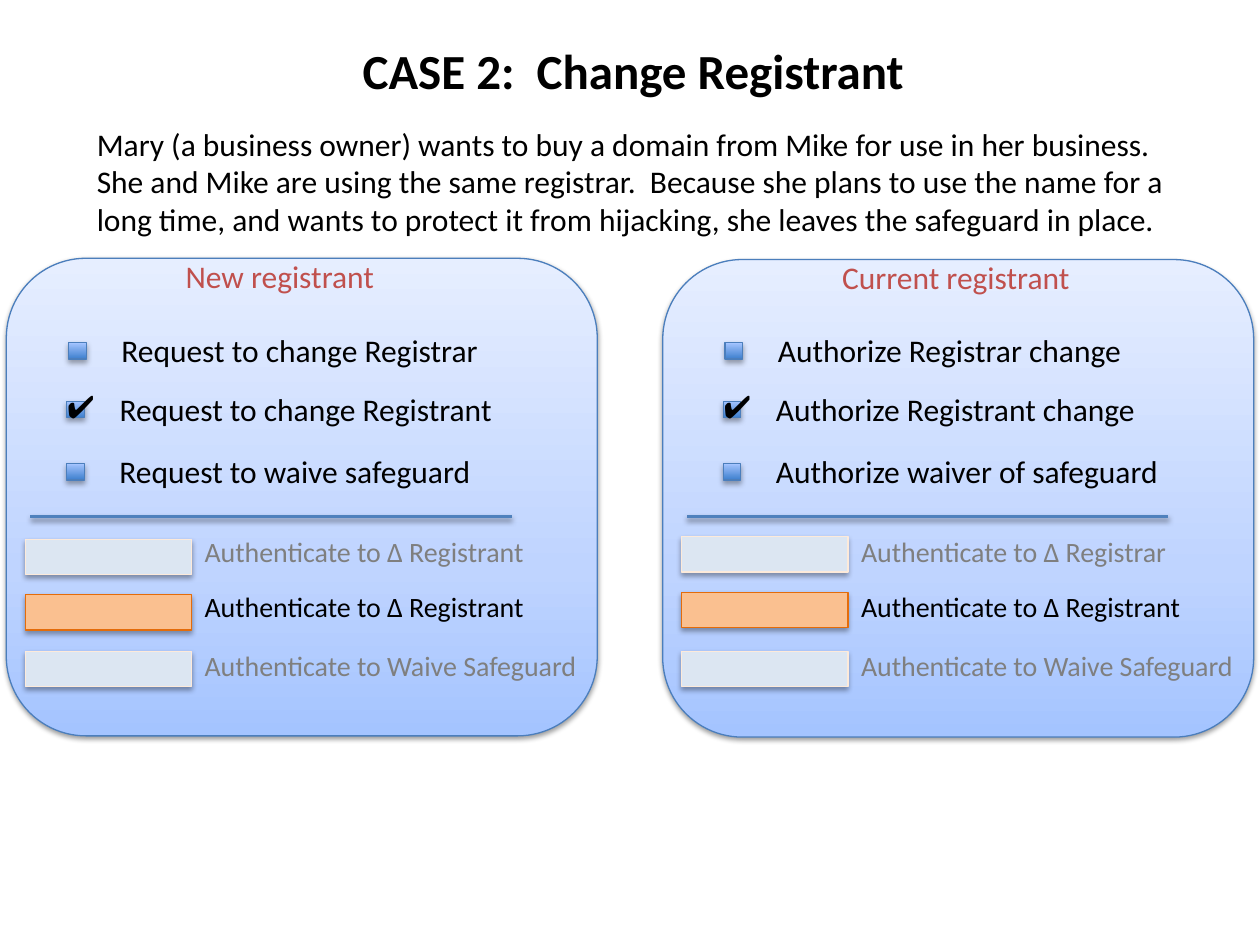
from pptx import Presentation
from pptx import util as u
from pptx.dml.color import RGBColor
from pptx.enum import shapes, text
from pptx.oxml import parse_xml
from pptx.oxml.ns import nsdecls

THEME = {
    "panel": [(0, "A4C4FF"), (35, "BFD4FF"), (100, "E6EEFF")],
    "box": [(0, "3F80CE"), (100, "A4C4FF")],
    "edge": "4B7EBC",
    "rule": "4F81BD",
    "idle": ("DCE6F2", "FDEADA"),
    "active": ("FAC090", "E46C0A"),
    "heading": {"size": 18, "color": "C0504D"},
    "body": {"size": 18},
    "tick": {"size": 18, "name": "Arial"},
    "title": {"size": 28, "bold": True},
    "idle_text": {"size": 16, "color": "7F7F7F"},
    "active_text": {"size": 16},
}

prs = Presentation()
prs.slide_width, prs.slide_height = u.Inches(10), u.Inches(7.5)
col, row = prs.slide_width / 100, prs.slide_height / 75
slide = prs.slides.add_slide(prs.slide_layouts[6])


def style(sp, fill, edge, width=0.75, shade=35, drop=1.8):
    if isinstance(fill, list):
        stops = "".join(
            f'<a:gs pos="{pos * 1000}"><a:srgbClr val="{color}"/></a:gs>'
            for pos, color in fill)
        sp._element.spPr.append(parse_xml(
            f'<a:gradFill {nsdecls("a")} rotWithShape="1"><a:gsLst>{stops}</a:gsLst>'
            '<a:lin ang="16200000" scaled="0"/></a:gradFill>'))
    elif fill:
        sp.fill.solid()
        sp.fill.fore_color.rgb = RGBColor.from_string(fill)
    sp.line.color.rgb = RGBColor.from_string(edge)
    sp.line.width = u.Pt(width)
    sp._element.spPr.append(parse_xml(
        f'<a:effectLst {nsdecls("a")}><a:outerShdw blurRad="{u.Pt(3.1)}" '
        f'dist="{u.Pt(drop)}" dir="5400000" rotWithShape="0"><a:srgbClr val="000000">'
        f'<a:alpha val="{shade * 1000}"/></a:srgbClr></a:outerShdw></a:effectLst>'))


def label(parent, words, x, y, w, h, look, wrap=False, align=text.PP_ALIGN.LEFT):
    tb = parent.add_textbox(int(x * col), int(y * row), int(w * col), int(h * row))
    tf = tb.text_frame
    tf.word_wrap = wrap
    tf.auto_size = text.MSO_AUTO_SIZE.SHAPE_TO_FIT_TEXT
    p = tf.paragraphs[0]
    p.alignment = align
    r = p.add_run()
    r.text = words
    look = {"name": "Calibri", "color": "000000", **look}
    r.font.color.rgb = RGBColor.from_string(look.pop("color"))
    look["size"] = u.Pt(look["size"])
    for key, value in look.items():
        setattr(r.font, key, value)


label(slide.shapes, "CASE 2:  Change Registrant", 27.4, 2.7, 45.7, 5.7,
      THEME["title"], align=text.PP_ALIGN.CENTER)

panels = [
    {"x": 0.5, "y": 20.5, "heading": ("New registrant", 17.3), "bar_y": 42.8,
     "requests": [("Request to change Registrar", 30.8),
                  ("Request to change Registrant", 32.2),
                  ("Request to waive safeguard", 30.4)],
     "first_bar": ("Authenticate to Δ Registrant", 27.9)},
    {"x": 52.6, "y": 20.6, "heading": ("Current registrant", 20.4), "bar_y": 42.6,
     "requests": [("Authorize Registrar change", 29.7),
                  ("Authorize Registrant change", 31),
                  ("Authorize waiver of safeguard", 32.9)],
     "first_bar": ("Authenticate to Δ Registrar", 26.8)},
]
RECT = shapes.MSO_SHAPE.RECTANGLE

for panel in panels:
    x, y = panel["x"], panel["y"]
    g = slide.shapes.add_group_shape().shapes
    sp = g.add_shape(shapes.MSO_SHAPE.ROUNDED_RECTANGLE, int(x * col), int(y * row),
                     int(46.9 * col), int(37.9 * row))
    style(sp, THEME["panel"], THEME["edge"], shade=38, drop=1.6)

    words, width = panel["heading"]
    label(g, words, x + 13.25, y - 0.6, width, 4, THEME["heading"])

    rows = zip(panel["requests"], (4.95, 4.8, 4.8), (27.2, 31.85, 36.8), (25.8, 30.5, 35.4))
    for (words, width), box_x, box_y, text_y in rows:
        sp = g.add_shape(RECT, int((x + box_x) * col), int(box_y * row),
                         int(1.4 * col), int(1.3 * row))
        style(sp, THEME["box"], THEME["edge"])
        label(g, words, x + box_x + 3.2, text_y, width, 4, THEME["body"])
    label(g, "✔", x + 3.85, 30.2, 4.3, 4, THEME["tick"])

    rule = g.add_connector(shapes.MSO_CONNECTOR.STRAIGHT, int((x + 40.1) * col),
                           int(41 * row), int((x + 1.9) * col), int(41 * row))
    style(rule, None, THEME["rule"], width=2, shade=38, drop=1.6)

    bars = [
        (panel["first_bar"], "idle", panel["bar_y"], 41.9),
        (("Authenticate to Δ Registrant", 27.9), "active", panel["bar_y"] + 4.4, 46.3),
        (("Authenticate to Waive Safeguard", 32.2), "idle", 51.7, 51),
    ]
    for (words, width), state, bar_y, text_y in bars:
        sp = g.add_shape(RECT, int((x + 1.5) * col), int(bar_y * row),
                         int(13.2 * col), int(2.8 * row))
        style(sp, *THEME[state])
        label(g, words, x + 14.75, text_y, width, 3.7, THEME[state + "_text"])

label(slide.shapes,
      "Mary (a business owner) wants to buy a domain from Mike for use in her business.  "
      "She and Mike are using the same registrar.  Because she plans to use the name for "
      "a long time, and wants to protect it from hijacking, she leaves the safeguard in place.",
      6.7, 9.4, 87.4, 10.1, THEME["body"], wrap=True)

prs.save("out.pptx")
